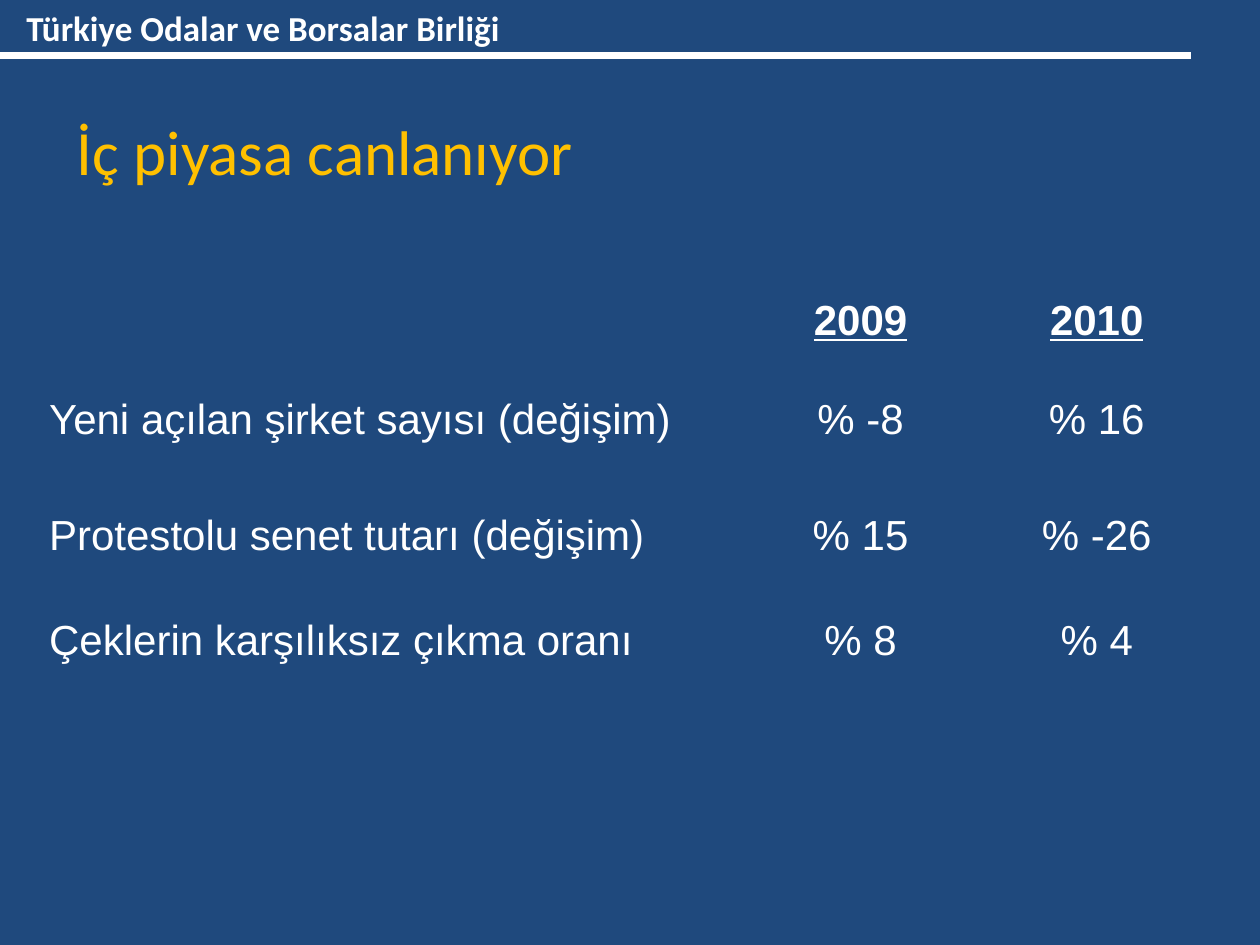
from typing import NamedTuple

from lxml.etree import SubElement
from pptx import Presentation
from pptx.dml.color import RGBColor
from pptx.enum.shapes import MSO_CONNECTOR as Link
from pptx.enum.text import MSO_ANCHOR as Anchor, PP_ALIGN as Align
from pptx.oxml.ns import qn
from pptx.util import Inches, Pt

NAVY = RGBColor(0x1F, 0x49, 0x7D)
WHITE = RGBColor(0xFF, 0xFF, 0xFF)
GOLD = RGBColor(0xFF, 0xC0, 0x00)

WIDE, HIGH = Inches(10), Inches(7.5)
BAR = Inches(0.44)
COLS = (5.16, 2.56, 1.19)
PLAIN = "{2D5ABB26-0587-4C30-8999-92F81FD0307C}"  # no style, no grid


class Row(NamedTuple):
    high: float
    cells: tuple[str, str, str]
    head: bool = False


ROWS = (
    Row(0.54, ("", "2009", "2010"), True),
    Row(0.79, ("Yeni açılan şirket sayısı (değişim)", "% -8", "% 16")),
    Row(0.92, ("Protestolu senet tutarı (değişim)", "% 15", "% -26")),
    Row(0.83, ("Çeklerin karşılıksız çıkma oranı", "% 8", "% 4")),
)


def style(para, name: str, size: int, color: RGBColor, bold: bool = False) -> None:
    font = para.font
    font.name, font.size, font.bold = name, Pt(size), bold
    font.color.rgb = color


def add_header(slide) -> None:
    rule = slide.shapes.add_connector(Link.STRAIGHT, 0, BAR, int(WIDE * 0.945), BAR)
    rule.line.color.rgb = WHITE
    rule.line.width = Pt(4)
    SubElement(rule._element.spPr, qn("a:effectLst"))

    frame = slide.shapes.add_textbox(0, 0, int(WIDE * 0.47), BAR).text_frame
    frame.word_wrap = True
    frame.margin_left = Inches(0.21)
    para = frame.paragraphs[0]
    para.text = "Türkiye Odalar ve Borsalar Birliği"
    style(para, "Calibri", 20, WHITE, True)


def add_title(slide) -> None:
    title = slide.shapes.title
    title.left, title.top = Inches(0.51), Inches(0.68)
    title.width, title.height = int(WIDE * 0.9), Inches(1.03)
    frame = title.text_frame
    frame.vertical_anchor = Anchor.MIDDLE
    para = frame.paragraphs[0]
    para.text = "İç piyasa canlanıyor"
    para.alignment = Align.LEFT
    style(para, "Calibri", 36, GOLD)


def fill_cell(cell, text: str, col: int, head: bool) -> None:
    cell.fill.background()
    cell.vertical_anchor = Anchor.BOTTOM
    cell.margin_left = cell.margin_right = 0
    cell.margin_top = cell.margin_bottom = 0
    para = cell.text_frame.paragraphs[0]
    para.text = text
    para.alignment = Align.CENTER if col else Align.LEFT
    style(para, "Arial", 24, WHITE, head)
    para.font.underline = head


def add_grid(slide) -> None:
    high = sum(row.high for row in ROWS)
    table = slide.shapes.add_table(
        len(ROWS), len(COLS), Inches(0.39), Inches(2.19),
        Inches(sum(COLS)), Inches(high)).table
    table.first_row = table.horz_banding = False
    table._tbl.tblPr.find(qn("a:tableStyleId")).text = PLAIN
    for col, wide in zip(table.columns, COLS):
        col.width = Inches(wide)
    for r, row in enumerate(ROWS):
        table.rows[r].height = Inches(row.high)
        for c, text in enumerate(row.cells):
            fill_cell(table.cell(r, c), text, c, row.head)


def main() -> None:
    deck = Presentation()
    deck.slide_width, deck.slide_height = WIDE, HIGH
    slide = deck.slides.add_slide(deck.slide_layouts[5])
    back = slide.background.fill
    back.solid()
    back.fore_color.rgb = NAVY
    add_header(slide)
    add_title(slide)
    add_grid(slide)
    deck.save("out.pptx")


if __name__ == "__main__":
    main()
